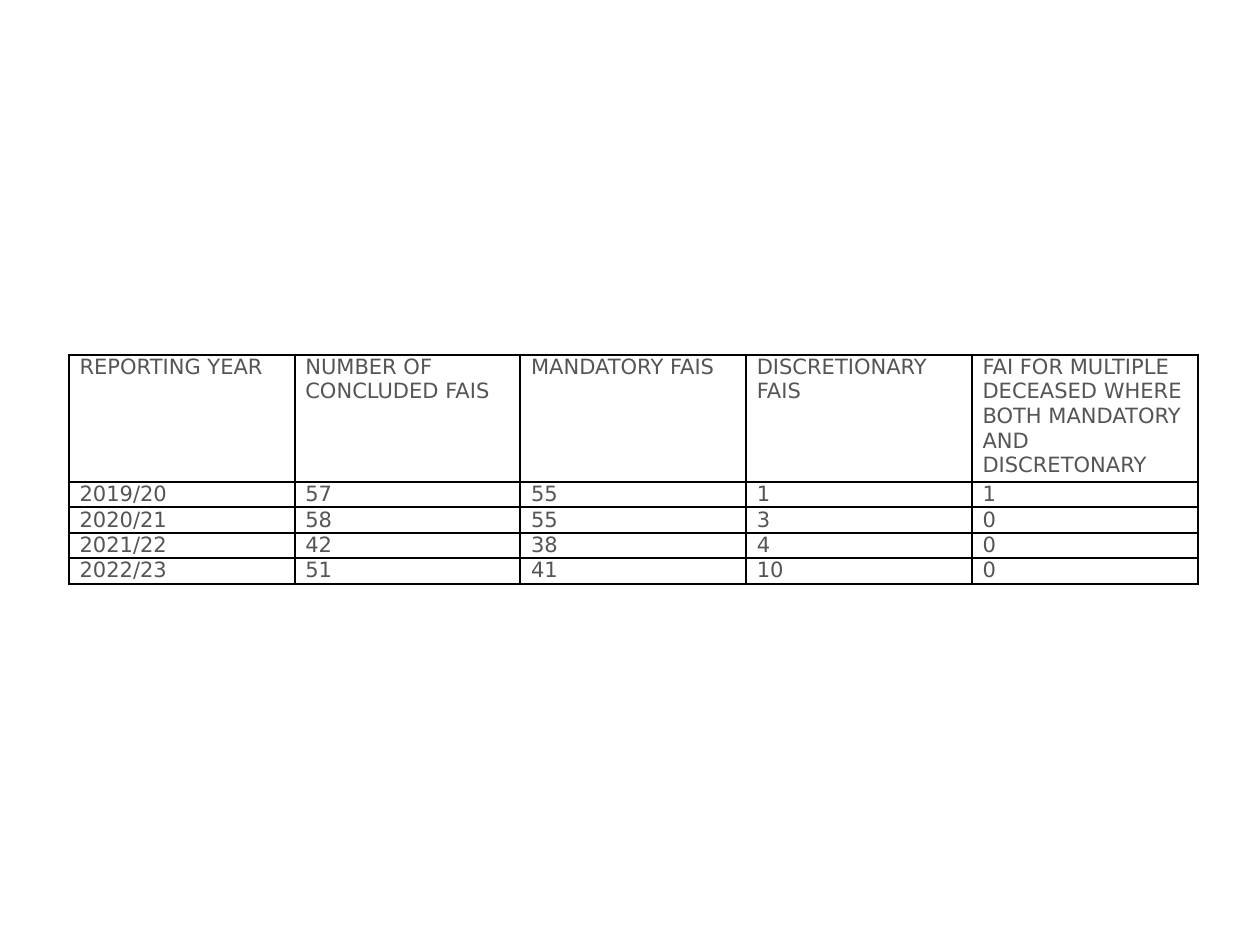
from lxml import etree
from pptx import Presentation
from pptx.dml.color import RGBColor
from pptx.enum.text import MSO_ANCHOR, PP_ALIGN
from pptx.oxml.ns import qn
from pptx.util import Pt

TOP = MSO_ANCHOR.TOP
LEFT = PP_ALIGN.LEFT
GREY = RGBColor(0x56, 0x54, 0x56)
BLACK = RGBColor(0x00, 0x00, 0x00)

INQUIRIES = [
    ("REPORTING YEAR", "NUMBER OF CONCLUDED FAIS", "MANDATORY FAIS", "DISCRETIONARY FAIS",
     "FAI FOR MULTIPLE DECEASED WHERE BOTH MANDATORY AND DISCRETONARY"),
    ("2019/20", "57", "55", "1", "1"),
    ("2020/21", "58", "55", "3", "0"),
    ("2021/22", "42", "38", "4", "0"),
    ("2022/23", "51", "41", "10", "0"),
]


def write_text(text_frame, text, font="DejaVu Sans", size=9, color=GREY, align=LEFT):
    paragraph = text_frame.paragraphs[0]
    paragraph.alignment = align
    run = paragraph.add_run()
    run.text = text
    run.font.name = font
    run.font.size = Pt(size)
    run.font.color.rgb = color


class SlideBuilder:
    def __init__(self, slide, border_color=BLACK, border_width=1, side_margin=4.6):
        self.slide = slide
        self.border_color = border_color
        self.border_width = border_width
        self.side_margin = side_margin

    def table(self, rows, left, top, column_width, header_height, row_height):
        heights = [header_height] + [row_height] * (len(rows) - 1)
        columns = len(rows[0])
        shape = self.slide.shapes.add_table(
            len(rows), columns, Pt(left), Pt(top), Pt(column_width * columns), Pt(sum(heights)))
        table = shape.table
        table.first_row = False
        table.horz_banding = False
        for column in table.columns:
            column.width = Pt(column_width)
        for row, height, texts in zip(table.rows, heights, rows):
            row.height = Pt(height)
            for cell, text in zip(row.cells, texts):
                self.cell(cell, text)

    def cell(self, cell, text):
        cell.margin_left = cell.margin_right = Pt(self.side_margin)
        cell.margin_top = cell.margin_bottom = Pt(0)
        cell.vertical_anchor = TOP
        write_text(cell.text_frame, text)
        self.borders(cell)
        cell.fill.background()

    def borders(self, cell):
        properties = cell._tc.get_or_add_tcPr()
        for side in ("a:lnL", "a:lnR", "a:lnT", "a:lnB"):
            line = etree.SubElement(properties, qn(side), w=str(Pt(self.border_width)))
            fill = etree.SubElement(line, qn("a:solidFill"))
            etree.SubElement(fill, qn("a:srgbClr"), val=str(self.border_color))


def main():
    presentation = Presentation()
    presentation.slide_width = Pt(540)
    presentation.slide_height = Pt(405)
    slide = presentation.slides.add_slide(presentation.slide_layouts[6])
    builder = SlideBuilder(slide)
    builder.table(INQUIRIES, left=29.5, top=152, column_width=96.75,
                  header_height=54.6, row_height=10.9)
    presentation.save("out.pptx")


if __name__ == "__main__":
    main()
